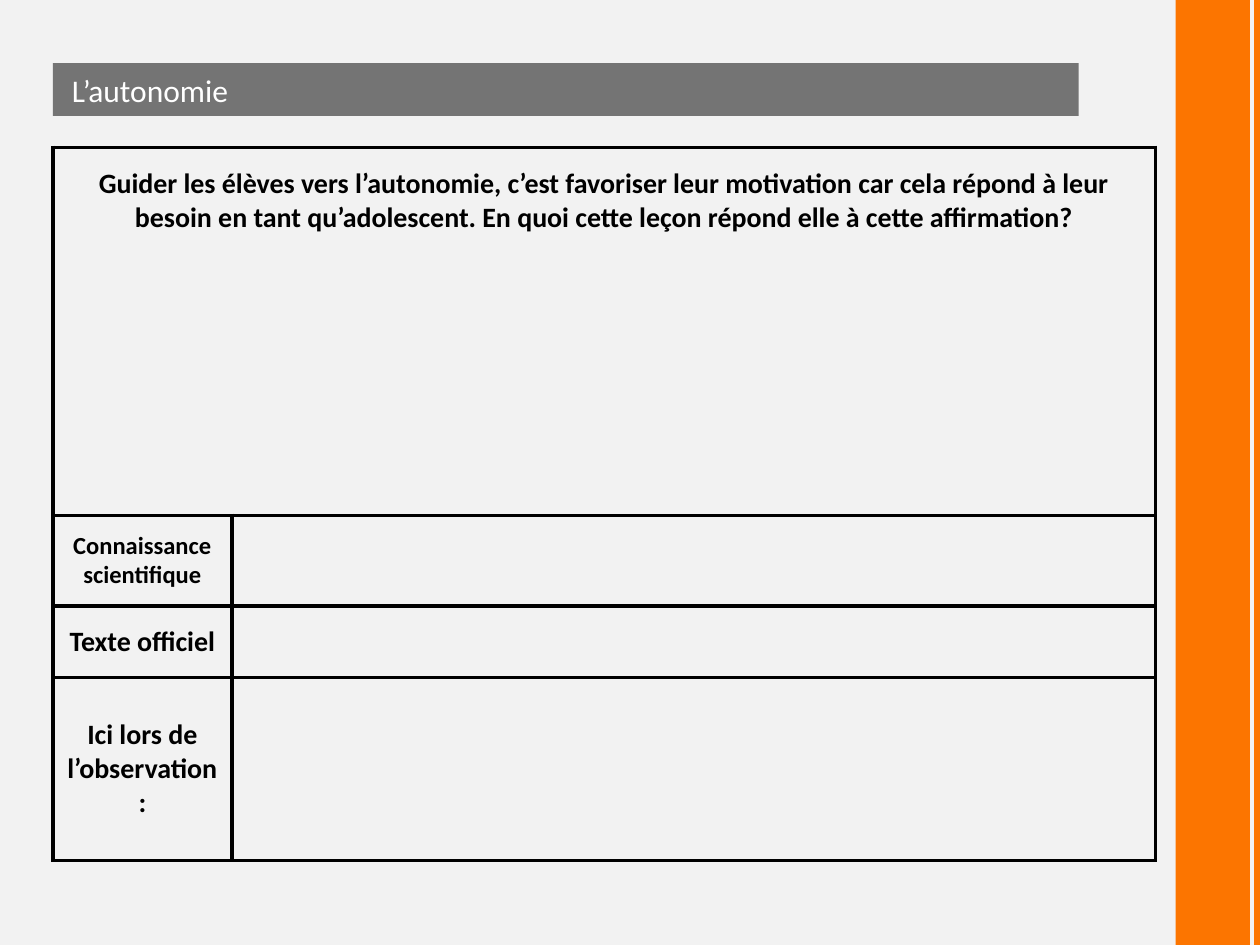
from typing import NamedTuple

from lxml.etree import SubElement
from pptx import Presentation
from pptx.dml.color import RGBColor
from pptx.enum.shapes import MSO_CONNECTOR as Connector, MSO_SHAPE as Shape
from pptx.enum.text import MSO_ANCHOR as Anchor, MSO_AUTO_SIZE as AutoSize, PP_ALIGN as Align
from pptx.oxml import parse_xml
from pptx.oxml.ns import nsdecls, qn
from pptx.util import Inches, Pt

COLORS = {"background": "F2F2F2", "accent": "FC7500", "banner": "0D0D0D",
          "banner_text": "FFFFFF", "ink": "000000"}
FONT = "Calibri"
BORDER = Pt(2.25)
COLUMN_WIDTHS = (1.42, 7.33)


class Row(NamedTuple):
    label: str
    height: float
    size: int = 16


QUESTION = Row("Guider les élèves vers l’autonomie, c’est favoriser leur motivation car cela "
               "répond à leur besoin en tant qu’adolescent. En quoi cette leçon répond elle "
               "à cette affirmation?", 2.92)
ROWS = (QUESTION, Row("Connaissance scientifique", 0.72, 14),
        Row("Texte officiel", 0.57), Row("Ici lors de l’observation:", 1.45))


def color(name: str) -> RGBColor:
    return RGBColor.from_string(COLORS[name])


def add_borders(cell) -> None:
    properties = cell._tc.get_or_add_tcPr()
    for index, side in enumerate(("lnL", "lnR", "lnT", "lnB")):
        properties.insert(index, parse_xml(
            f'<a:{side} {nsdecls("a")} w="{BORDER}"><a:solidFill>'
            f'<a:srgbClr val="{COLORS["ink"]}"/></a:solidFill></a:{side}>'))


def write_label(cell, row: Row) -> None:
    cell.text = row.label
    cell.vertical_anchor = Anchor.MIDDLE
    paragraph = cell.text_frame.paragraphs[0]
    paragraph.alignment = Align.CENTER
    font = paragraph.font
    font.name, font.size, font.bold = FONT, Pt(row.size), True
    font.color.rgb = color("ink")


def add_side_stripes(slide) -> None:
    band = slide.shapes.add_shape(Shape.RECTANGLE, Inches(9.33), 0, Inches(0.59), Inches(7.5))
    band.shadow.inherit = False
    band.fill.solid()
    band.fill.fore_color.rgb = color("accent")
    band.line.fill.background()
    edge = slide.shapes.add_connector(Connector.STRAIGHT, Inches(9.98), 0,
                                      Inches(9.98), Inches(7.5))
    edge.line.color.rgb = color("accent")
    edge.line.width = Pt(4)
    SubElement(edge._element.spPr, qn("a:effectLst"))


def format_title(banner) -> None:
    banner.left, banner.top = Inches(0.42), Inches(0.5)
    banner.width, banner.height = Inches(8.14), Inches(0.42)
    banner.fill.solid()
    banner.fill.fore_color.rgb = color("banner")
    tint = banner._element.spPr.find(qn("a:solidFill"))[0]
    SubElement(tint, qn("a:alpha"), val="55000")
    frame = banner.text_frame
    frame.text = "L’autonomie"
    frame.auto_size = AutoSize.NONE
    frame.vertical_anchor = Anchor.MIDDLE
    frame.margin_left = Inches(0.15)
    heading = frame.paragraphs[0]
    heading.alignment = Align.LEFT
    heading.font.name, heading.font.size = FONT, Pt(18)
    heading.font.color.rgb = color("banner_text")


def add_question_table(slide) -> None:
    table = slide.shapes.add_table(
        len(ROWS), len(COLUMN_WIDTHS), Inches(0.42), Inches(1.17),
        Inches(sum(COLUMN_WIDTHS)), Inches(sum(row.height for row in ROWS))).table
    table.first_row = table.horz_banding = False
    for column, width in zip(table.columns, COLUMN_WIDTHS):
        column.width = Inches(width)
    for index, row in enumerate(ROWS):
        table.rows[index].height = Inches(row.height)
        write_label(table.cell(index, 0), row)
    for cell in table.iter_cells():
        cell.fill.background()
        add_borders(cell)

    # The question spans the top row and leaves room for an answer below it
    question = table.cell(0, 0)
    question.merge(table.cell(0, 1))
    question.vertical_anchor = Anchor.TOP
    question.margin_top = Inches(0.15)


def main() -> None:
    deck = Presentation()
    deck.slide_width, deck.slide_height = Inches(10), Inches(7.5)
    slide = deck.slides.add_slide(deck.slide_layouts.get_by_name("Title Only"))
    slide.background.fill.solid()
    slide.background.fill.fore_color.rgb = color("background")
    add_side_stripes(slide)
    format_title(slide.shapes.title)
    add_question_table(slide)
    deck.save("out.pptx")


if __name__ == "__main__":
    main()
